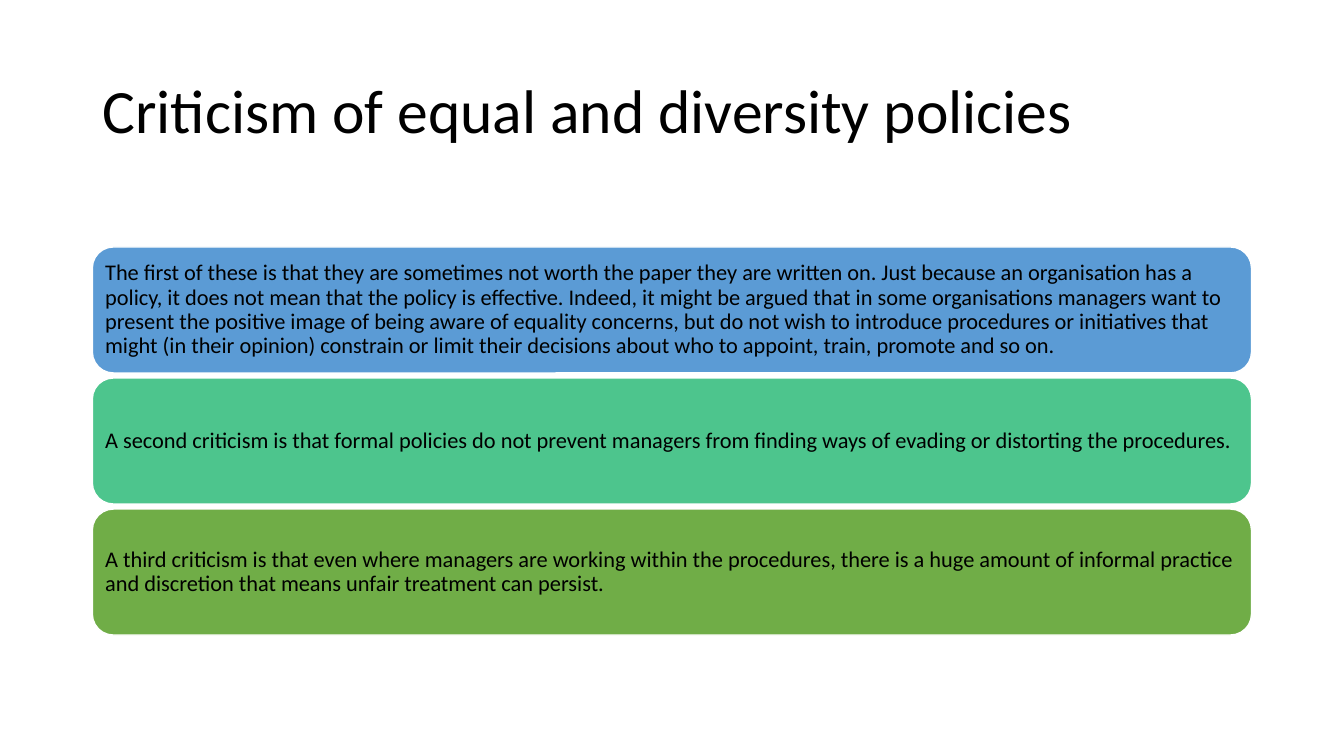
from pptx import Presentation
from pptx.dml.color import RGBColor
from pptx.enum.shapes import MSO_SHAPE as Shape
from pptx.enum.text import MSO_ANCHOR as Anchor, MSO_AUTO_SIZE as AutoSize, PP_ALIGN as Align
from pptx.util import Pt

LEFT, WIDTH = 66, 828
CARD_TOP, CARD_HEIGHT, CARD_STEP = 176.4, 90, 93.6
CRITICISMS = [
    ("5B9BD5", "The first of these is that they are sometimes not worth the paper they are written on. "
     "Just because an organisation has a policy, it does not mean that the policy is effective. "
     "Indeed, it might be argued that in some organisations managers want to present the positive "
     "image of being aware of equality concerns, but do not wish to introduce procedures or "
     "initiatives that might (in their opinion) constrain or limit their decisions about who to "
     "appoint, train, promote and so on."),
    ("4DC58D", "A second criticism is that formal policies do not prevent managers from finding ways "
     "of evading or distorting the procedures."),
    ("70AD47", "A third criticism is that even where managers are working within the procedures, "
     "there is a huge amount of informal practice and discretion that means unfair treatment can "
     "persist."),
]


def colour(hex_code):
    """Return the colour for a hex string."""
    return RGBColor.from_string(hex_code)


def write(frame, text, size, side=7.2, upright=3.6):
    """Fill a text frame with one left-aligned, vertically centred paragraph."""
    frame.word_wrap = True
    frame.auto_size = AutoSize.NONE
    frame.vertical_anchor = Anchor.MIDDLE
    frame.margin_left = frame.margin_right = Pt(side)
    frame.margin_top = frame.margin_bottom = Pt(upright)
    frame.text = text
    paragraph = frame.paragraphs[0]
    paragraph.alignment = Align.LEFT
    paragraph.line_spacing = 0.9
    font = paragraph.runs[0].font
    font.name, font.size = "Calibri", Pt(size)
    font.color.rgb = colour("000000")


def add_title(slide, text):
    """Place and fill the slide title."""
    title = slide.shapes.title
    title.left, title.top, title.width, title.height = Pt(LEFT), Pt(28.8), Pt(WIDTH), Pt(104.4)
    write(title.text_frame, text, size=44)


def add_card(slide, top, fill, text):
    """Add one rounded card holding a criticism."""
    card = slide.shapes.add_shape(Shape.ROUNDED_RECTANGLE, Pt(LEFT), Pt(top), Pt(WIDTH), Pt(CARD_HEIGHT))
    card.shadow.inherit = False
    card.fill.solid()
    card.fill.fore_color.rgb = colour(fill)
    card.line.color.rgb = colour("FFFFFF")
    card.line.width = Pt(1)
    write(card.text_frame, text, size=16, side=4.8, upright=4.8)


def main():
    """Build and save the slide."""
    deck = Presentation()
    deck.slide_width, deck.slide_height = Pt(960), Pt(540)
    slide = deck.slides.add_slide(deck.slide_layouts[5])
    add_title(slide, "Criticism of equal and diversity policies")
    for index, (fill, text) in enumerate(CRITICISMS):
        add_card(slide, CARD_TOP + index * CARD_STEP, fill, text)
    deck.save("out.pptx")


if __name__ == "__main__":
    main()
